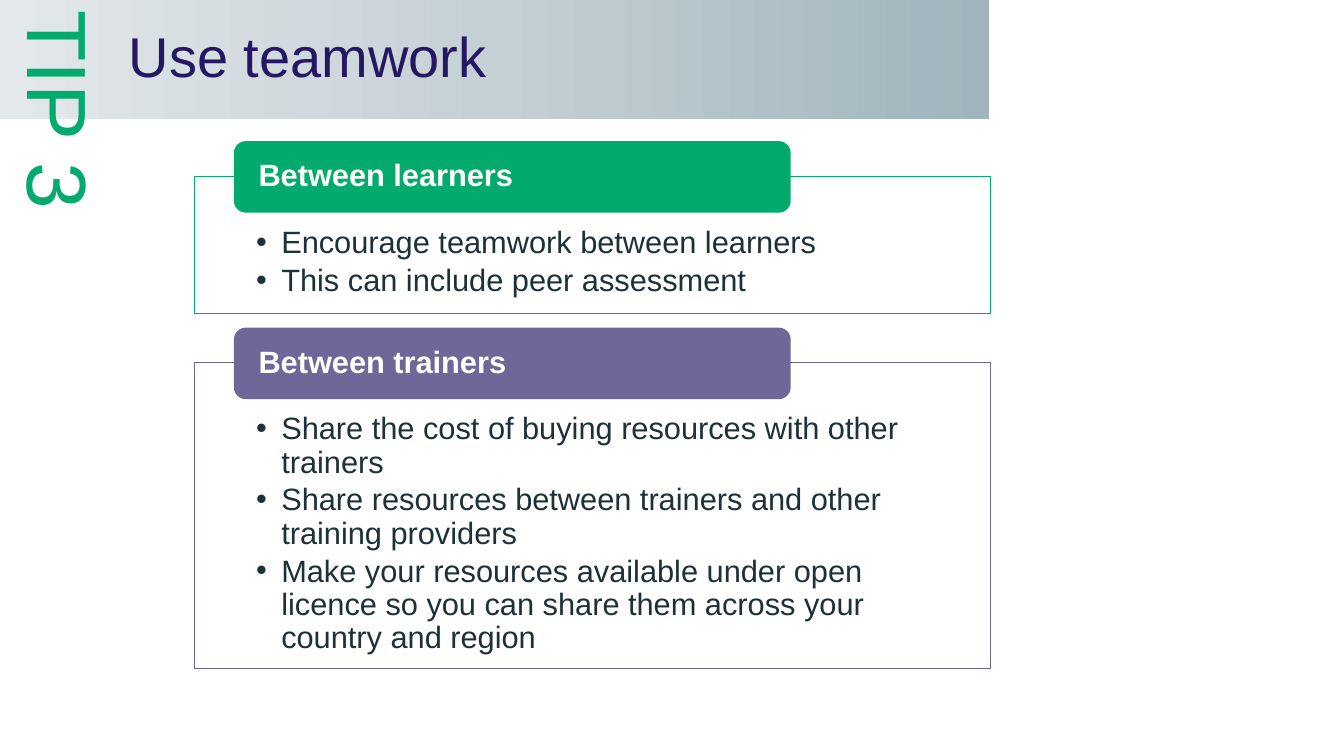
import pptx
import pptx.util
import pptx.dml.color
import pptx.enum.shapes
import pptx.enum.text
import pptx.oxml
import pptx.oxml.ns
from pptx.util import Inches

SHAPE = pptx.enum.shapes.MSO_SHAPE
ANCHOR = pptx.enum.text.MSO_ANCHOR
qn = pptx.oxml.ns.qn

GREEN, PURPLE = "02AA6D", "6F6798"
NAVY, INK, WHITE = "251863", "1D3138", "FFFFFF"
LEFT, WIDTH = 1.93, 7.89
TAB_HIGH, TAB_RISE = 0.71, 0.35
BANDS = [(0, "A0B4BD"), (50, "C5D0D5"), (100, "E3E8EA")]
CARDS = [
    (1.75, 1.36, GREEN, "Between learners", [
        "Encourage teamwork between learners",
        "This can include peer assessment",
    ]),
    (3.6, 3.03, PURPLE, "Between trainers", [
        "Share the cost of buying resources with other trainers",
        "Share resources between trainers and other training providers",
        "Make your resources available under open licence "
        "so you can share them across your country and region",
    ]),
]


def color(code):
    return pptx.dml.color.RGBColor.from_string(code)


def add_sub(parent, tag, **attrs):
    child = parent.makeelement(qn(tag), attrs)
    parent.append(child)
    return child


def add_box(slide, kind, left, top, width, height, fill=None, line=None):
    box = slide.shapes.add_shape(
        kind, Inches(left), Inches(top), Inches(width), Inches(height))
    box.shadow.inherit = False
    if fill:
        box.fill.solid()
        box.fill.fore_color.rgb = color(fill)
    if line:
        box.line.color.rgb = color(line)
        box.line.width = pptx.util.Pt(0.75)
    else:
        box.line.fill.background()
    return box


def write(shape, lines, size=22, ink=INK, bold=False, anchor=ANCHOR.MIDDLE,
          inset=(0.1, 0.05, 0.1, 0.05), indent=0, bullet=False, after=0,
          spacing=0.9):
    """Fill a shape with one paragraph per line; inset is left, top, right, bottom."""
    frame = shape.text_frame
    frame.word_wrap = True
    frame.vertical_anchor = anchor
    (frame.margin_left, frame.margin_top,
     frame.margin_right, frame.margin_bottom) = map(Inches, inset)
    for i, line in enumerate(lines):
        para = frame.add_paragraph() if i else frame.paragraphs[0]
        para.alignment = pptx.enum.text.PP_ALIGN.LEFT
        para.line_spacing = spacing
        para.space_after = pptx.util.Pt(after)
        props = para._p.get_or_add_pPr()
        props.set("marL", str(Inches(indent)))
        if bullet:
            props.set("indent", str(-Inches(indent)))
            add_sub(props, "a:buFont", typeface="Arial")
            add_sub(props, "a:buChar", char="•")
        run = para.add_run()
        run.text = line
        run.font.name = "Arial"
        run.font.size = pptx.util.Pt(size)
        run.font.bold = bold
        run.font.color.rgb = color(ink)


def add_title(slide):
    bar = add_box(slide, SHAPE.RECTANGLE, 0, 0, 9.81, 1.18)
    bar.fill.gradient()
    bar.fill.gradient_angle = 180
    stops = bar._element.spPr.find(qn("a:gradFill")).find(qn("a:gsLst"))
    for stop in list(stops):
        stops.remove(stop)
    for place, code in BANDS:
        stop = add_sub(stops, "a:gs", pos=str(place * 1000))
        add_sub(stop, "a:srgbClr", val=code)
    write(bar, ["Use teamwork"], size=40, ink=NAVY, indent=1.18)


def add_tip(slide):
    tip = slide.shapes.add_textbox(0, 0, Inches(1.21), Inches(7.5))
    write(tip, ["TIP 3"], size=60, ink=GREEN, spacing=1,
          inset=(0.1, 0.1, 0.1, 0.1))
    tip.text_frame._txBody.bodyPr.set("vert", "eaVert")


def add_card(slide, top, height, hue, head, points):
    body = add_box(slide, SHAPE.RECTANGLE, LEFT, top, WIDTH, height, WHITE, hue)
    fill = body._element.spPr.find(qn("a:solidFill"))
    add_sub(fill[0], "a:alpha", val="90000")
    write(body, points, anchor=ANCHOR.TOP, inset=(0.61, 0.5, 0.61, 0.17),
          indent=0.25, bullet=True, after=3.3)
    tab = add_box(slide, SHAPE.ROUNDED_RECTANGLE, LEFT + 0.39, top - TAB_RISE,
                  WIDTH * 0.7, TAB_HIGH, hue)
    write(tab, [head], ink=WHITE, bold=True, inset=(0.21, 0, 0.21, 0))


def main():
    deck = pptx.Presentation()
    deck.slide_width, deck.slide_height = Inches(13.33), Inches(7.5)
    slide = deck.slides.add_slide(deck.slide_layouts[6])
    add_title(slide)
    add_tip(slide)
    for card in CARDS:
        add_card(slide, *card)
    deck.save("out.pptx")


if __name__ == "__main__":
    main()
